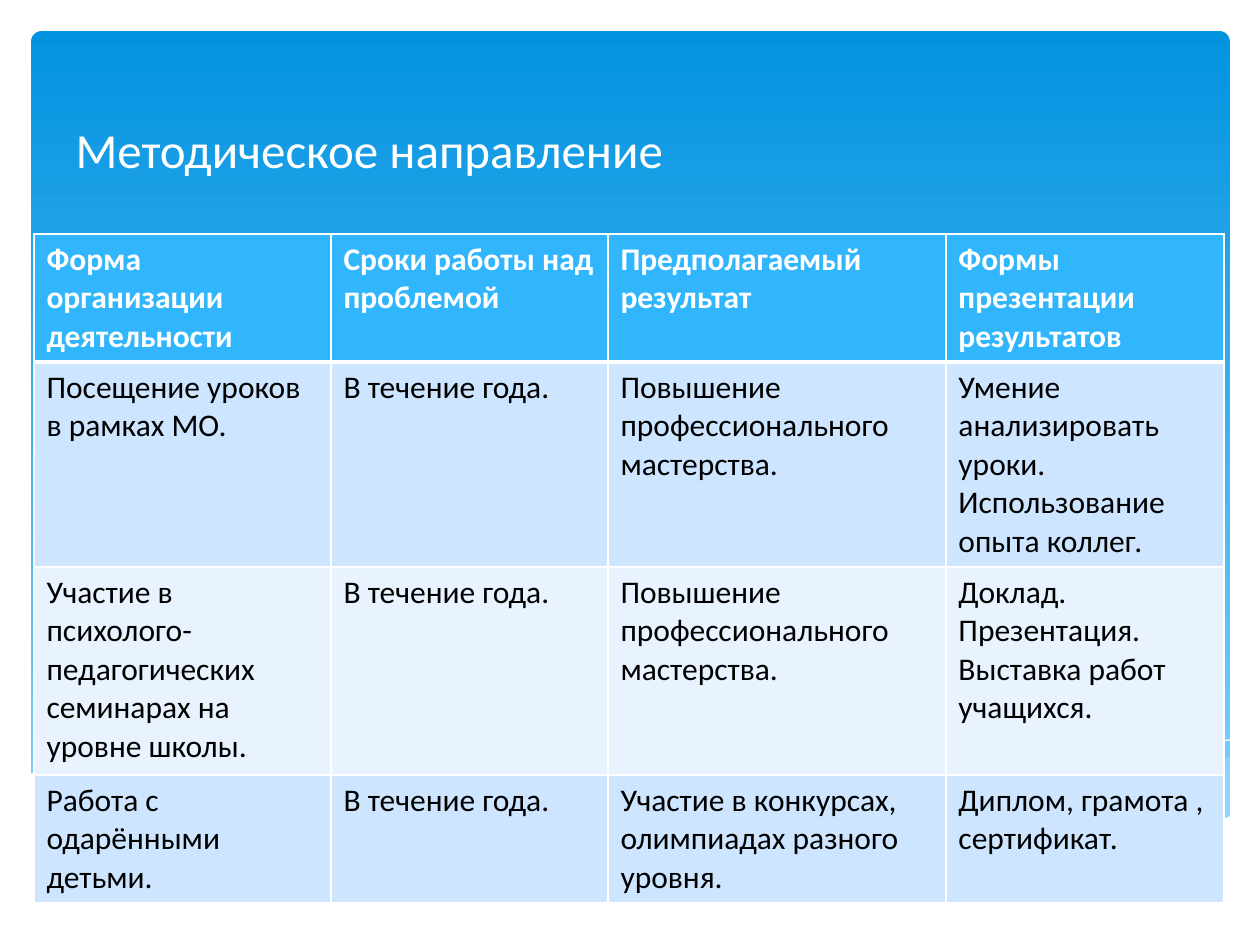
from typing import NamedTuple, Optional

import pptx
import pptx.dml.color
import pptx.enum.shapes
import pptx.enum.text
import pptx.oxml
import pptx.oxml.ns
import pptx.util
from lxml import etree

RGBColor = pptx.dml.color.RGBColor
WHITE = RGBColor(0xFF, 0xFF, 0xFF)
BLACK = RGBColor(0x00, 0x00, 0x00)
SKY_TOP = RGBColor(0x02, 0x93, 0xE0)
SKY_BOTTOM = RGBColor(0x83, 0xD3, 0xFE)
WAVE_BLUE = RGBColor(0xC6, 0xE7, 0xFC)
HEADER_BLUE = RGBColor(0x31, 0xB6, 0xFD)
BAND_DARK = RGBColor(0xCD, 0xE5, 0xFE)
BAND_LIGHT = RGBColor(0xE8, 0xF3, 0xFF)

FONT = "Calibri"
EMU_PER_PX = 914400 / 126


class Wave(NamedTuple):
    points: list[tuple[int, int]]
    fill: Optional[RGBColor] = None
    opacity: int = 100


WAVES = [
    # Light crest on the right
    Wave([(1230, 757), (1162, 770), (1086, 787), (983, 811), (891, 832), (834, 840),
          (906, 849), (985, 856), (1064, 856), (1122, 849), (1180, 835), (1231, 818)],
         WAVE_BLUE, 29),
    # Broad middle wave
    Wave([(1126, 851), (1056, 841), (978, 827), (891, 809), (794, 786), (736, 772),
          (683, 762), (633, 753), (557, 745), (479, 741), (413, 742), (362, 747),
          (432, 757), (510, 772), (567, 786), (668, 809), (758, 828), (839, 842),
          (911, 852), (974, 856), (1045, 857)],
         WAVE_BLUE, 40),
    # Thin white crest lines
    Wave([(391, 752), (434, 746), (490, 742), (546, 742), (616, 746), (702, 754),
          (801, 769), (917, 791), (1048, 822), (1144, 848)]),
    Wave([(774, 830), (823, 817), (908, 796), (1017, 771), (1092, 756), (1166, 746),
          (1230, 740)]),
    # White foreground
    Wave([(1231, 816), (1172, 836), (1109, 849), (1037, 855), (959, 853), (867, 844),
          (760, 827), (667, 807), (563, 784), (460, 761), (368, 746), (290, 739),
          (223, 738), (166, 741), (120, 747), (84, 755), (58, 763), (30, 774),
          (29, 921), (1231, 921)],
         WHITE),
]

COLUMN_WIDTHS = [297, 277, 338, 278]
ROW_HEIGHTS = [127, 205, 208, 128]
PLAN = [
    ["Форма организации деятельности", "Сроки работы над проблемой",
     "Предполагаемый результат", "Формы презентации результатов"],
    ["Посещение уроков в рамках МО.", "В течение года.",
     "Повышение профессионального мастерства.",
     "Умение анализировать уроки. Использование опыта коллег."],
    ["Участие в психолого- педагогических семинарах на уровне школы.", "В течение года.",
     "Повышение профессионального мастерства.",
     "Доклад. Презентация. Выставка работ учащихся."],
    ["Работа с одарёнными детьми.", "В течение года.",
     "Участие в конкурсах, олимпиадах разного уровня.",
     "Диплом, грамота , сертификат."],
]


def px(length: int) -> pptx.util.Emu:
    return pptx.util.Emu(round(length * EMU_PER_PX))


def format_text(frame, size: int, color: RGBColor, bold: bool = False) -> None:
    for paragraph in frame.paragraphs:
        for run in paragraph.runs:
            run.font.name = FONT
            run.font.size = pptx.util.Pt(size)
            run.font.bold = bold
            run.font.color.rgb = color


def draw_sky(slide) -> None:
    sky = slide.shapes.add_shape(pptx.enum.shapes.MSO_SHAPE.ROUNDED_RECTANGLE,
                                 px(31), px(31), px(1199), px(832))
    sky.adjustments[0] = 0.013
    sky.shadow.inherit = False
    sky.line.fill.background()
    sky.fill.gradient()
    sky.fill.gradient_angle = 270
    for stop, position, color in zip(sky.fill.gradient_stops, (0, 1), (SKY_TOP, SKY_BOTTOM)):
        stop.position = position
        stop.color.rgb = color


def draw_wave(slide, wave: Wave) -> None:
    builder = slide.shapes.build_freeform(*wave.points[0], scale=EMU_PER_PX)
    builder.add_line_segments(wave.points[1:], close=wave.fill is not None)
    outline = builder.convert_to_shape()
    outline.shadow.inherit = False
    if wave.fill is None:
        outline.fill.background()
        outline.line.color.rgb = WHITE
        outline.line.width = pptx.util.Pt(0)
        return
    outline.line.fill.background()
    outline.fill.solid()
    outline.fill.fore_color.rgb = wave.fill
    if wave.opacity < 100:
        color = outline._element.spPr.find(pptx.oxml.ns.qn("a:solidFill"))[0]
        etree.SubElement(color, pptx.oxml.ns.qn("a:alpha"), val=str(wave.opacity * 1000))


def set_borders(cell, top: int, bottom: int) -> None:
    """Give a cell white borders, with widths in points."""
    properties = cell._tc.get_or_add_tcPr()
    for side, width in (("L", 1), ("R", 1), ("T", top), ("B", bottom)):
        border = etree.SubElement(properties, pptx.oxml.ns.qn(f"a:ln{side}"),
                                  w=str(pptx.util.Pt(width)))
        fill = etree.SubElement(border, pptx.oxml.ns.qn("a:solidFill"))
        etree.SubElement(fill, pptx.oxml.ns.qn("a:srgbClr"), val=str(WHITE))


def draw_plan(slide) -> None:
    plan = slide.shapes.add_table(len(PLAN), len(COLUMN_WIDTHS), px(34), px(234),
                                  px(sum(COLUMN_WIDTHS)), px(sum(ROW_HEIGHTS))).table
    for column, width in zip(plan.columns, COLUMN_WIDTHS):
        column.width = px(width)
    for row, height in zip(plan.rows, ROW_HEIGHTS):
        row.height = px(height)

    row_fills = [HEADER_BLUE, BAND_DARK, BAND_LIGHT, BAND_DARK]
    for row_index, (entries, row_fill) in enumerate(zip(PLAN, row_fills)):
        is_header = row_index == 0
        for column_index, entry in enumerate(entries):
            cell = plan.cell(row_index, column_index)
            set_borders(cell, top=3 if row_index == 1 else 1, bottom=3 if is_header else 1)
            cell.fill.solid()
            cell.fill.fore_color.rgb = row_fill
            cell.text_frame.text = entry
            format_text(cell.text_frame, 18, WHITE if is_header else BLACK, is_header)


def place_title(slide) -> None:
    title = slide.shapes.title
    title.left, title.top, title.width, title.height = px(63), px(47), px(1134), px(138)
    title.text_frame.text = "Методическое направление"
    title.text_frame.vertical_anchor = pptx.enum.text.MSO_ANCHOR.BOTTOM
    title.text_frame.paragraphs[0].alignment = pptx.enum.text.PP_ALIGN.LEFT
    format_text(title.text_frame, 28, WHITE)
    # Bring the title in front of the backdrop
    slide.shapes._spTree.append(title._element)


def main() -> None:
    presentation = pptx.Presentation()
    presentation.slide_width, presentation.slide_height = px(1260), px(945)
    slide = presentation.slides.add_slide(presentation.slide_layouts[5])

    # Backdrop
    draw_sky(slide)
    for wave in WAVES:
        draw_wave(slide, wave)

    # Content
    draw_plan(slide)
    place_title(slide)
    presentation.save("out.pptx")


if __name__ == "__main__":
    main()
